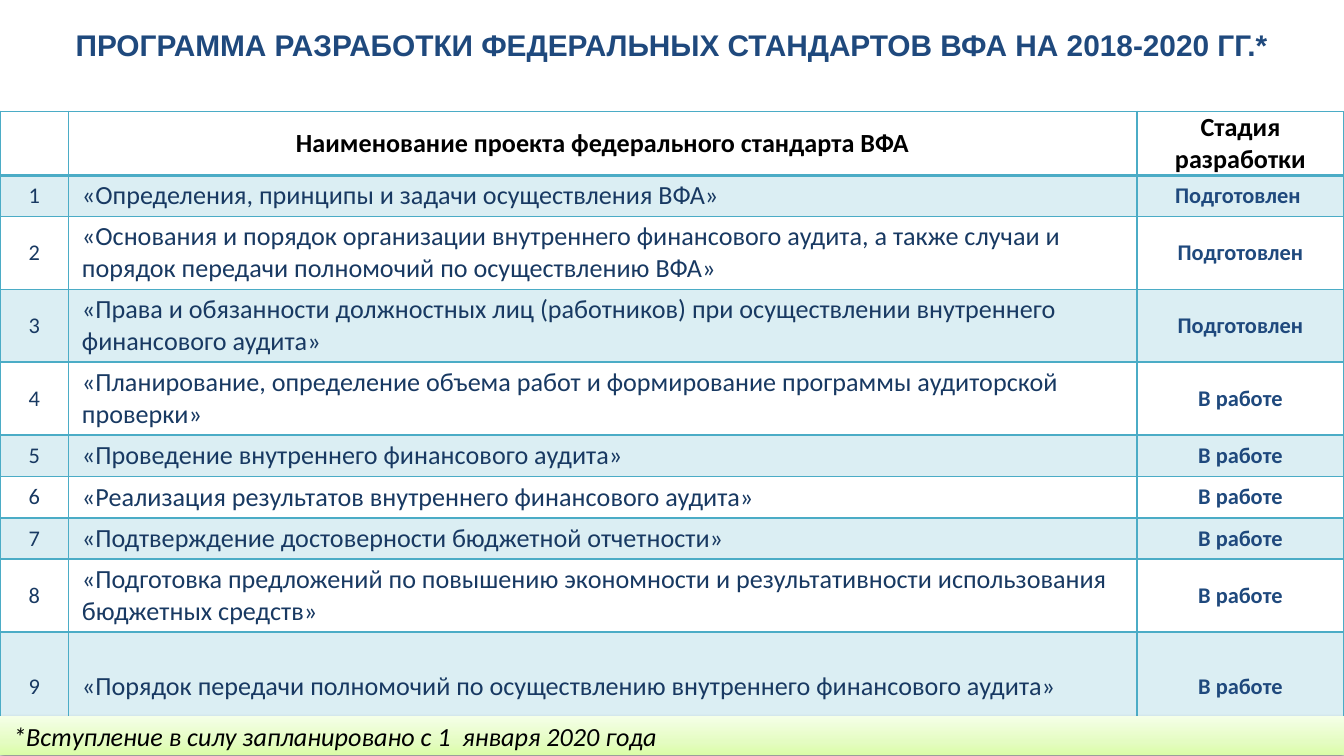
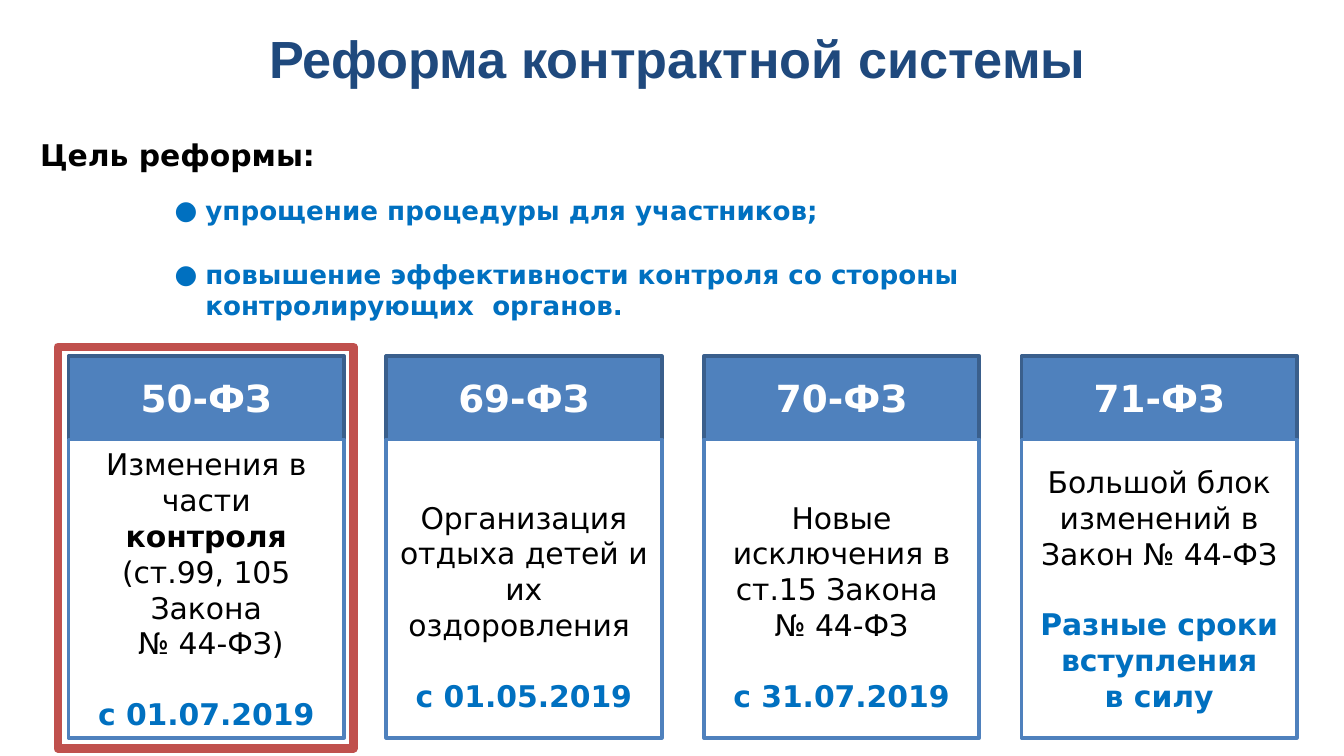
from dataclasses import dataclass
from typing import NamedTuple

from lxml.etree import SubElement
from pptx import Presentation
from pptx.dml.color import RGBColor
from pptx.enum.shapes import MSO_SHAPE
from pptx.enum.text import MSO_ANCHOR, MSO_AUTO_SIZE, PP_ALIGN
from pptx.oxml import parse_xml
from pptx.oxml.ns import nsdecls, qn
from pptx.util import Inches, Pt


@dataclass(frozen=True)
class Theme:
    navy: str = "1F497D"
    row_text: str = "183962"
    teal: str = "4BACC6"
    blue: str = "4F81BD"
    blue_edge: str = "3A5F8C"
    accent: str = "0070C0"
    red: str = "C0504D"
    black: str = "000000"
    white: str = "FFFFFF"
    footer_stops: tuple = ((0, "DAFDA7"), (35, "E4FCC2"), (100, "F5FFE7"))
    title_font: str = "Arial"
    table_font: str = "Calibri"
    body_font: str = "DejaVu Sans"
    small: int = 12
    medium: int = 14
    body: int = 16
    card_title: int = 20
    large_title: int = 28


THEME = Theme()


class Area(NamedTuple):
    left: float
    top: float
    width: float
    height: float

    def lengths(self) -> list:
        return [Inches(value) for value in self]


class Standard(NamedTuple):
    name: str
    stage: str
    height: float


class Span(NamedTuple):
    text: str
    bold: bool = False


class Card(NamedTuple):
    law: str
    body: list
    dates: list
    top_inset: float = 0.05


READY = "Подготовлен"
ACTIVE = "В работе"
STANDARDS = [
    Standard("«Определения, принципы и задачи осуществления ВФА»", READY + " ", 0.29),
    Standard("«Основания и порядок организации внутреннего финансового аудита, а также случаи и "
             "порядок передачи полномочий по осуществлению ВФА»", READY, 0.52),
    Standard("«Права и обязанности должностных лиц (работников) при осуществлении внутреннего "
             "финансового аудита»", READY, 0.52),
    Standard("«Планирование, определение объема работ и формирование программы аудиторской "
             "проверки»", ACTIVE, 0.52),
    Standard("«Проведение внутреннего финансового аудита»", ACTIVE, 0.29),
    Standard("«Реализация результатов внутреннего финансового аудита»", ACTIVE, 0.31),
    Standard("«Подтверждение достоверности бюджетной отчетности»", ACTIVE, 0.29),
    Standard("«Подготовка предложений по повышению экономности и результативности использования "
             "бюджетных средств»", ACTIVE, 0.52),
    Standard("«Порядок передачи полномочий по осуществлению внутреннего финансового аудита»",
             ACTIVE, 0.81),
]
COLUMN_WIDTHS = (0.51, 7.95, 1.54)
HEADER_HEIGHT = 0.44
HEADINGS = ("", "Наименование проекта федерального стандарта ВФА", "Стадия разработки")

GOALS = [
    "упрощение процедуры для участников;",
    "повышение эффективности контроля со стороны\nконтролирующих  органов.",
]
CARDS = [
    Card("50-ФЗ",
         [[Span("Изменения в части "), Span("контроля", True), Span(" (ст.99, 105 Закона")],
          [Span(" № 44-ФЗ)")]],
         ["с 01.07.2019"]),
    Card("69-ФЗ", [[Span("Организация отдыха детей и их оздоровления ")]],
         ["с 01.05.2019"], 0.31),
    Card("70-ФЗ", [[Span("Новые исключения в ст.15 Закона \n№ 44-ФЗ")]],
         ["с 31.07.2019"], 0.31),
    Card("71-ФЗ", [[Span("Большой блок изменений в Закон № 44-ФЗ")]],
         ["Разные сроки вступления", "в силу"]),
]
FIRST_LEFT, LAST_LEFT = 0.51, 7.6
CARD_WIDTH = 2.05
CARD_TOP, CARD_SPLIT, CARD_BOTTOM = 2.65, 3.27, 5.49


def write(para, text: str, *, size: int, color: str, font: str,
          bold: bool = False, italic: bool = False) -> None:
    for index, line in enumerate(text.split("\n")):
        if index:
            para.add_line_break()
        span = para.add_run()
        span.text = line
        span.font.size = Pt(size)
        span.font.name = font
        span.font.bold = bold
        span.font.italic = italic
        span.font.color.rgb = RGBColor.from_string(color)


def next_paragraph(frame, align=PP_ALIGN.CENTER):
    first = frame.paragraphs[0]
    para = first if not first.runs else frame.add_paragraph()
    para.alignment = align
    return para


def add_titled_page(deck, title: str, area: Area, size: int):
    page = deck.slides.add_slide(deck.slide_layouts[5])
    box = page.shapes.title
    box.left, box.top, box.width, box.height = area.lengths()
    frame = box.text_frame
    frame.auto_size = MSO_AUTO_SIZE.NONE
    frame.vertical_anchor = MSO_ANCHOR.MIDDLE
    write(next_paragraph(frame), title, size=size, color=THEME.navy,
          font=THEME.title_font, bold=True)
    return page


def add_rectangle(shapes, area: Area, *, fill: str | None = None,
                  line: str | None = None, line_width: float = 2):
    box = shapes.add_shape(MSO_SHAPE.RECTANGLE, *area.lengths())
    box.shadow.inherit = False
    if fill:
        box.fill.solid()
        box.fill.fore_color.rgb = RGBColor.from_string(fill)
    else:
        box.fill.background()
    if line:
        box.line.color.rgb = RGBColor.from_string(line)
        box.line.width = Pt(line_width)
    else:
        box.line.fill.background()
    box.text_frame.word_wrap = True
    box.text_frame.vertical_anchor = MSO_ANCHOR.MIDDLE
    return box


def set_borders(cell, bottom_width: float) -> None:
    properties = cell._tc.get_or_add_tcPr()
    for index, side in enumerate("LRTB"):
        width = Pt(bottom_width if side == "B" else 1)
        properties.insert(index, parse_xml(
            f'<a:ln{side} {nsdecls("a")} w="{width}"><a:solidFill>'
            f'<a:srgbClr val="{THEME.teal}"/></a:solidFill></a:ln{side}>'))


def format_cell(cell, *, margins: tuple, shaded: bool, bottom_width: float) -> None:
    cell.margin_left = cell.margin_right = margins[0]
    cell.margin_top = cell.margin_bottom = margins[1]
    cell.vertical_anchor = MSO_ANCHOR.MIDDLE
    if shaded:
        cell.fill.solid()
        cell.fill.fore_color.rgb = RGBColor.from_string(THEME.teal)
        color = cell._tc.tcPr.find(".//" + qn("a:srgbClr"))
        SubElement(color, qn("a:alpha")).set("val", "20000")
    else:
        cell.fill.background()
    set_borders(cell, bottom_width)


def add_standards_table(page) -> None:
    heights = [HEADER_HEIGHT] + [standard.height for standard in STANDARDS]
    area = Area(0, 0.83, sum(COLUMN_WIDTHS), sum(heights))
    table = page.shapes.add_table(len(heights), len(COLUMN_WIDTHS), *area.lengths()).table
    table.horz_banding = False
    for column, width in zip(table.columns, COLUMN_WIDTHS):
        column.width = Inches(width)
    for row, height in zip(table.rows, heights):
        row.height = Inches(height)

    for column, heading in enumerate(HEADINGS):
        cell = table.cell(0, column)
        format_cell(cell, margins=(Inches(0), Inches(0)), shaded=False, bottom_width=2)
        if heading:
            write(next_paragraph(cell.text_frame), heading, size=THEME.medium,
                  color=THEME.black, font=THEME.table_font, bold=True)

    for number, standard in enumerate(STANDARDS, 1):
        values = (
            (str(number), THEME.small, THEME.row_text, False, PP_ALIGN.CENTER),
            (standard.name, THEME.medium, THEME.row_text, False, PP_ALIGN.LEFT),
            (standard.stage, THEME.small, THEME.navy, True, PP_ALIGN.CENTER),
        )
        for column, (text, size, color, bold, align) in enumerate(values):
            cell = table.cell(number, column)
            format_cell(cell, margins=(Inches(0.1), Pt(2.5)), shaded=number % 2 == 1,
                        bottom_width=1)
            write(next_paragraph(cell.text_frame, align), text, size=size, color=color,
                  font=THEME.table_font, bold=bold)


def add_footnote(page, text: str) -> None:
    box = add_rectangle(page.shapes, Area(0, 5.33, 10, 0.29))
    box.fill.gradient()
    box.fill.gradient_angle = 90
    properties = box._element.spPr
    stops = properties.find(".//" + qn("a:gsLst"))
    for stop in list(stops):
        stops.remove(stop)
    for position, color in THEME.footer_stops:
        stops.append(parse_xml(f'<a:gs {nsdecls("a")} pos="{position * 1000}">'
                               f'<a:srgbClr val="{color}"/></a:gs>'))
    properties.find(qn("a:effectLst")).append(parse_xml(
        f'<a:outerShdw {nsdecls("a")} blurRad="{Pt(3.1)}" dist="{Pt(1.6)}" dir="5400000" '
        f'rotWithShape="0"><a:srgbClr val="{THEME.black}"><a:alpha val="38000"/>'
        '</a:srgbClr></a:outerShdw>'))
    write(next_paragraph(box.text_frame, PP_ALIGN.LEFT), text, size=THEME.medium,
          color=THEME.black, font=THEME.table_font, italic=True)


def add_goals(page) -> None:
    box = page.shapes.add_textbox(*Area(0.2, 0.97, 9.21, 1.48).lengths())
    frame = box.text_frame
    frame.word_wrap = True
    write(next_paragraph(frame, PP_ALIGN.LEFT), "Цель реформы:", size=THEME.body,
          color=THEME.black, font=THEME.body_font, bold=True)
    for goal, gap in zip(GOALS, (11.5, 17.5)):
        para = next_paragraph(frame, PP_ALIGN.LEFT)
        para.space_before = Pt(gap)
        properties = para._p.get_or_add_pPr()
        properties.set("marL", str(Inches(1.23)))
        properties.set("indent", str(Inches(-0.23)))
        SubElement(properties, qn("a:buFont")).set("typeface", THEME.body_font)
        SubElement(properties, qn("a:buChar")).set("char", "●")
        write(para, goal, size=THEME.medium, color=THEME.accent,
              font=THEME.body_font, bold=True)


def add_card(page, card: Card, left: float) -> None:
    group = page.shapes.add_group_shape()
    header = add_rectangle(group.shapes,
                           Area(left, CARD_TOP, CARD_WIDTH, CARD_SPLIT - CARD_TOP),
                           fill=THEME.blue, line=THEME.blue_edge)
    write(next_paragraph(header.text_frame), card.law, size=THEME.card_title,
          color=THEME.white, font=THEME.body_font, bold=True)
    body = add_rectangle(group.shapes,
                         Area(left, CARD_SPLIT, CARD_WIDTH, CARD_BOTTOM - CARD_SPLIT),
                         fill=THEME.white, line=THEME.blue)
    frame = body.text_frame
    frame.margin_top = Inches(card.top_inset)
    for spans in card.body:
        para = next_paragraph(frame)
        for span in spans:
            write(para, span.text, size=THEME.body, color=THEME.black,
                  font=THEME.body_font, bold=span.bold)
    for index, date in enumerate(card.dates):
        para = next_paragraph(frame)
        para.space_before = Pt(0 if index else 18.6)
        write(para, date, size=THEME.body, color=THEME.accent,
              font=THEME.body_font, bold=True)


def build_program_page(deck) -> None:
    page = add_titled_page(deck, "ПРОГРАММА РАЗРАБОТКИ ФЕДЕРАЛЬНЫХ СТАНДАРТОВ ВФА НА 2018-2020 ГГ.*",
                           Area(0, 0.15, 10, 0.37), THEME.body)
    add_standards_table(page)
    add_footnote(page, "*Вступление в силу запланировано с 1  января 2020 года")


def build_reform_page(deck) -> None:
    page = add_titled_page(deck, "Реформа контрактной системы",
                           Area(1.14, 0.14, 7.8, 0.57), THEME.large_title)
    add_goals(page)
    pitch = (LAST_LEFT - FIRST_LEFT) / (len(CARDS) - 1)
    for index, card in enumerate(CARDS):
        add_card(page, card, FIRST_LEFT + index * pitch)
    add_rectangle(page.shapes, Area(0.43, 2.58, 2.2, 2.99), line=THEME.red, line_width=4.5)


def main() -> None:
    deck = Presentation()
    deck.slide_width, deck.slide_height = Inches(10), Inches(10 * 9 / 16)
    build_program_page(deck)
    build_reform_page(deck)
    deck.save("out.pptx")


if __name__ == "__main__":
    main()
